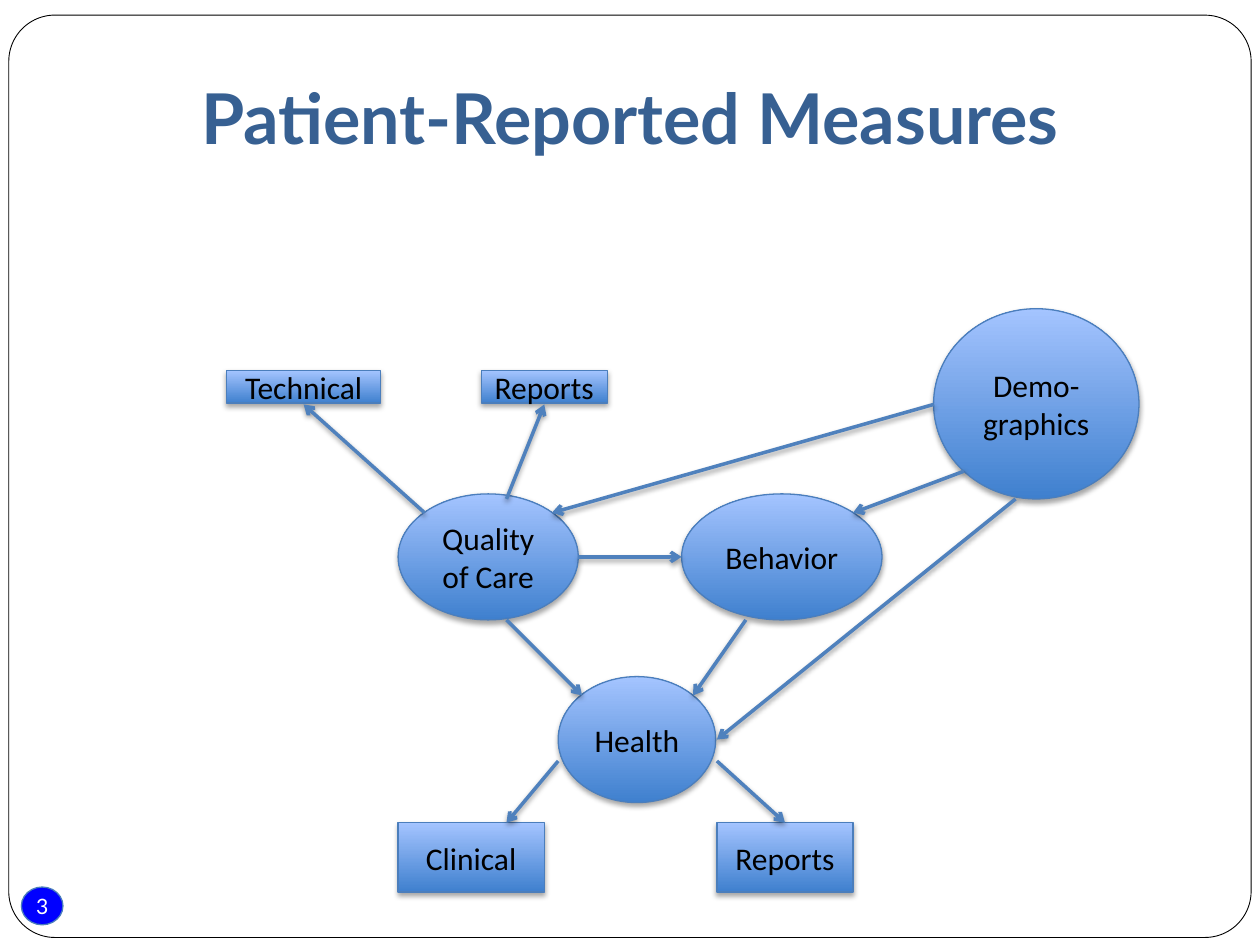
from dataclasses import dataclass

from lxml import etree
from pptx import Presentation
from pptx.dml.color import RGBColor
from pptx.enum.shapes import MSO_CONNECTOR, MSO_SHAPE
from pptx.enum.text import MSO_ANCHOR, PP_ALIGN
from pptx.oxml.ns import qn
from pptx.util import Inches, Pt

OVAL = MSO_SHAPE.OVAL
BOX = MSO_SHAPE.RECTANGLE
ROUNDED = MSO_SHAPE.ROUNDED_RECTANGLE
STRAIGHT = MSO_CONNECTOR.STRAIGHT
MIDDLE = MSO_ANCHOR.MIDDLE
CENTER = PP_ALIGN.CENTER

COLORS = {
    "title": "376092",
    "gradient_bottom": "3F80CE",
    "gradient_top": "A4C4FF",
    "outline": "4B7EBC",
    "arrow": "4F81BD",
    "badge": "0000FF",
    "black": "000000",
    "white": "FFFFFF",
}


@dataclass(frozen=True)
class Node:
    text: str
    kind: int
    left: float
    top: float
    width: float
    height: float


@dataclass(frozen=True)
class Arrow:
    start: tuple[float, float]
    end: tuple[float, float]


NODES = [
    Node("Health", OVAL, 4.43, 5.37, 1.25, 1),
    Node("Behavior", OVAL, 5.41, 3.92, 1.59, 1),
    Node("Quality of Care", OVAL, 3.16, 3.92, 1.43, 1),
    Node("Demo-graphics", OVAL, 7.41, 2.45, 1.63, 1.51),
    Node("Technical", BOX, 1.8, 2.94, 1.22, 0.26),
    Node("Reports", BOX, 3.82, 2.94, 1, 0.26),
    Node("Clinical", BOX, 3.16, 6.53, 1.16, 0.55),
    Node("Reports", BOX, 5.69, 6.53, 1.08, 0.55),
]

ARROWS = [
    Arrow((4.59, 4.42), (5.41, 4.42)),  # quality to behavior
    Arrow((4.02, 4.92), (4.62, 5.52)),  # quality to health
    Arrow((5.92, 4.92), (5.5, 5.52)),   # behavior to health
    Arrow((7.41, 3.21), (4.38, 4.07)),  # demographics to quality
    Arrow((7.65, 3.74), (6.77, 4.07)),  # demographics to behavior
    Arrow((8.06, 3.96), (5.69, 5.87)),  # demographics to health
    Arrow((4.02, 3.96), (4.32, 3.21)),  # quality to reports
    Arrow((3.37, 4.07), (2.41, 3.21)),  # quality to technical
    Arrow((4.43, 6.04), (4.02, 6.53)),  # health to clinical
    Arrow((5.69, 6.04), (6.23, 6.53)),  # health to reports
]


def color(name: str) -> RGBColor:
    return RGBColor.from_string(COLORS[name])


def add_shadow(shape, distance: float, opacity: int) -> None:
    properties = shape._element.spPr
    effects = properties.find(qn("a:effectLst"))
    if effects is None:
        effects = etree.SubElement(properties, qn("a:effectLst"))
    shadow = etree.SubElement(
        effects, qn("a:outerShdw"), blurRad=str(Pt(3.1)), dist=str(Pt(distance)),
        dir="5400000", rotWithShape="0")
    shade = etree.SubElement(shadow, qn("a:srgbClr"), val=COLORS["black"])
    etree.SubElement(shade, qn("a:alpha"), val=str(opacity * 1000))


def add_text(shape, text: str, font: str, size: float, color_name: str,
             bold: bool = False) -> None:
    frame = shape.text_frame
    frame.word_wrap = True
    frame.vertical_anchor = MIDDLE
    paragraph = frame.paragraphs[0]
    paragraph.alignment = CENTER
    run = paragraph.add_run()
    run.text = text
    run.font.name = font
    run.font.size = Pt(size)
    run.font.bold = bold
    run.font.color.rgb = color(color_name)


def add_outlined_shape(slide, kind: int, left: float, top: float, width: float,
                       height: float, line_color: str, line_width: float):
    shape = slide.shapes.add_shape(
        kind, Inches(left), Inches(top), Inches(width), Inches(height))
    shape.shadow.inherit = False
    shape.line.color.rgb = color(line_color)
    shape.line.width = Pt(line_width)
    return shape


def add_node(slide, node: Node) -> None:
    shape = add_outlined_shape(slide, node.kind, node.left, node.top,
                               node.width, node.height, "outline", 0.75)
    shape.fill.gradient()
    shape.fill.gradient_angle = 90
    for stop, name in zip(shape.fill.gradient_stops,
                          ("gradient_bottom", "gradient_top")):
        stop.color.rgb = color(name)
    add_shadow(shape, 1.8, 35)
    add_text(shape, node.text, "Calibri", 18, "black")


def add_arrow(slide, arrow: Arrow) -> None:
    points = [Inches(value) for value in (*arrow.start, *arrow.end)]
    connector = slide.shapes.add_connector(STRAIGHT, *points)
    connector.line.color.rgb = color("arrow")
    connector.line.width = Pt(2)
    etree.SubElement(connector.line._get_or_add_ln(), qn("a:tailEnd"), type="arrow")
    add_shadow(connector, 1.6, 38)


def main() -> None:
    presentation = Presentation()
    presentation.slide_width = Inches(10)
    presentation.slide_height = Inches(7.5)
    slide = presentation.slides.add_slide(presentation.slide_layouts[6])

    # Page number badge
    badge = add_outlined_shape(slide, OVAL, 0.17, 7.04, 0.33, 0.3, "outline", 0.75)
    badge.fill.solid()
    badge.fill.fore_color.rgb = color("badge")
    frame = badge.text_frame
    frame.margin_left = frame.margin_right = frame.margin_top = frame.margin_bottom = 0
    add_text(badge, "3", "Lato", 12.1, "white")

    # Slide border
    border = add_outlined_shape(slide, ROUNDED, 0.07, 0.12, 9.86, 7.32, "black", 0.5)
    border.adjustments[0] = 0.05
    border.fill.background()

    # Title
    title = slide.shapes.add_textbox(Inches(0.5), Inches(0.3), Inches(9), Inches(1.25))
    add_text(title, "Patient-Reported Measures", "Lato", 40, "title", bold=True)

    # Concept diagram
    for node in NODES:
        add_node(slide, node)
    for arrow in ARROWS:
        add_arrow(slide, arrow)

    presentation.save("out.pptx")


if __name__ == "__main__":
    main()
